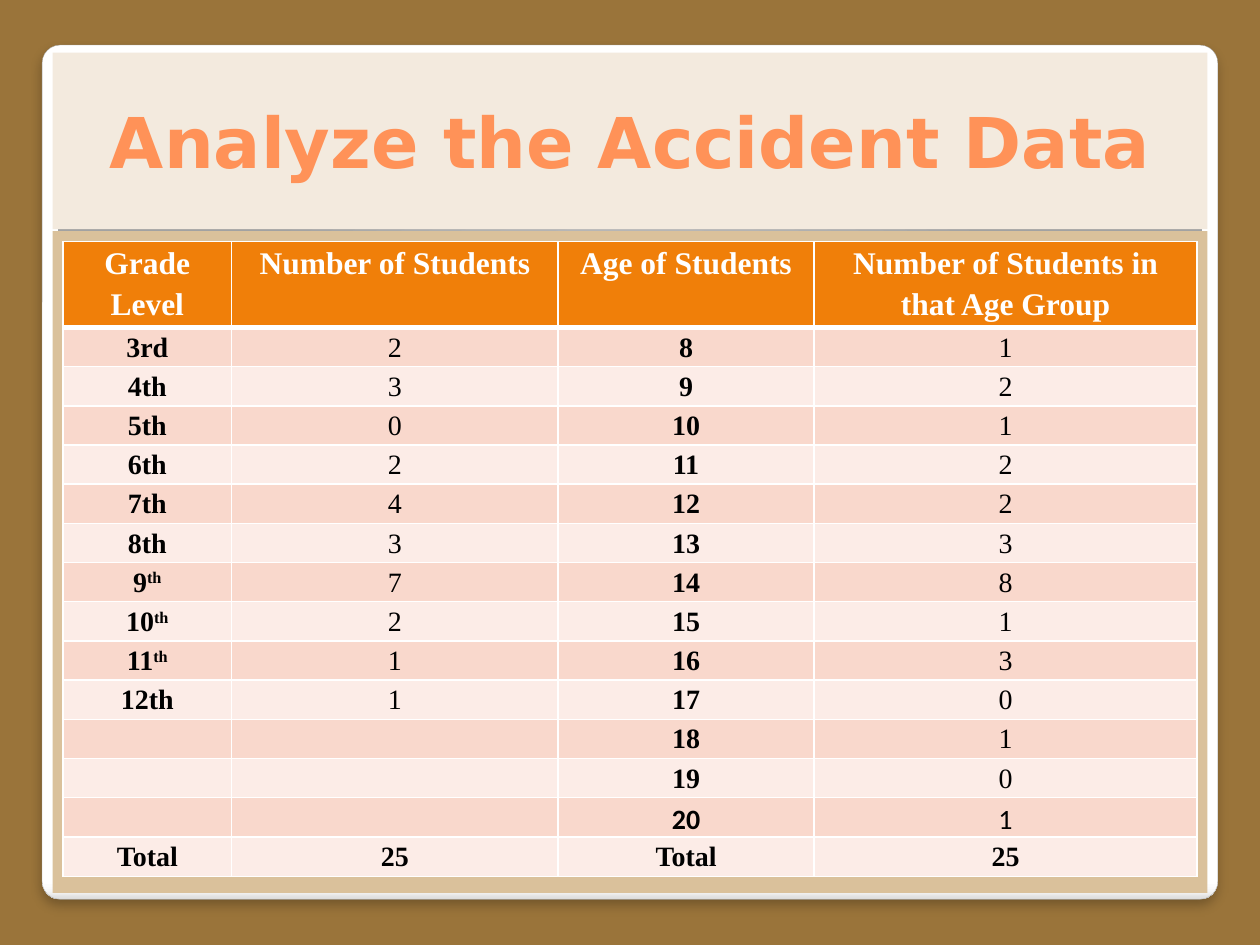
from dataclasses import dataclass
from typing import Optional

from pptx import Presentation
from pptx.dml.color import RGBColor
from pptx.enum.shapes import MSO_SHAPE as Preset
from pptx.enum.text import MSO_ANCHOR as Anchor, PP_ALIGN as Align
from pptx.oxml import parse_xml
from pptx.oxml.ns import nsdecls
from pptx.util import Cm, Pt


@dataclass(frozen=True)
class Theme:
    background: str = "9A743A"
    panel_line: str = "A4A4A4"
    body: str = "DAC19B"
    title_fill: str = "F3EADE"
    title_text: str = "FF9258"
    header: str = "F07F09"
    bands: tuple = ("F9D8CC", "FCECE7")
    white: str = "FFFFFF"
    black: str = "000000"
    title_font: str = "DejaVu Sans"
    table_font: str = "Times New Roman"
    plain_font: str = "Calibri"
    title_size: int = 40
    header_size: int = 18
    cell_size: int = 16


@dataclass(frozen=True)
class Panel:
    left: float
    top: float
    width: float
    height: float
    preset: Preset = Preset.RECTANGLE
    fill: Optional[str] = None
    stops: tuple = ()
    direction: str = ""


@dataclass(frozen=True)
class Row:
    grade: str
    grade_count: str
    age: str
    age_count: str
    font: str = "Times New Roman"
    total: bool = False


THEME = Theme()

FRAME = Panel(
    0.85, 0.91, 23.7, 17.22, Preset.ROUNDED_RECTANGLE,
    stops=((0, "FFFFFF"), (98, "FFFFFF"), (99, "F7F7F7"), (100, "DADADA")),
    direction='<a:lin ang="5400000" scaled="0"/>',
)
INNER = Panel(
    1.17, 1.19, 23.06, 15.24, Preset.ROUNDED_RECTANGLE,
    stops=((0, "FFFFFF"), (55, "E1E1E1"), (100, "A2A2A2")),
    direction='<a:path path="circle"><a:fillToRect l="50000" t="175000" r="50000" b="-75000"/></a:path>',
)
BODY = Panel(1.06, 4.66, 23.28, 13.34, fill=THEME.body)
TITLE = Panel(1.06, 1.06, 23.28, 3.56, fill=THEME.title_fill)

HEADINGS = ("Grade Level", "Number of Students", "Age of Students", "Number of Students in that Age Group")
ROWS = (
    Row("3rd", "2", "8", "1"),
    Row("4th", "3", "9", "2"),
    Row("5th", "0", "10", "1"),
    Row("6th", "2", "11", "2"),
    Row("7th", "4", "12", "2"),
    Row("8th", "3", "13", "3"),
    Row("9^th", "7", "14", "8"),
    Row("10^th", "2", "15", "1"),
    Row("11^th", "1", "16", "3"),
    Row("12th", "1", "17", "0"),
    Row("", "", "18", "1"),
    Row("", "", "19", "0"),
    Row("", "", "20", "1", font=THEME.plain_font),
    Row("Total", "25", "Total", "25", total=True),
)
COLUMN_WIDTHS = (3.4, 6.58, 5.16, 7.72)
TABLE_LEFT, TABLE_TOP = 1.27, 4.87
HEADER_HEIGHT, ROW_HEIGHT = 1.73, 0.79


def write_text(frame, text: str, *, font: str, size: int, color: str, bold: bool = False,
               line_spacing: Optional[float] = None, space_after: Optional[int] = None) -> None:
    para = frame.paragraphs[0]
    para.alignment = Align.CENTER
    if line_spacing is not None:
        para.line_spacing = line_spacing
    if space_after is not None:
        para.space_after = Pt(space_after)
    for index, part in enumerate(text.split("^")):
        span = para.add_run()
        span.text = part
        span.font.name = font
        span.font.size = Pt(size)
        span.font.bold = bold
        span.font.color.rgb = RGBColor.from_string(color)
        if index:
            span._r.get_or_add_rPr().set("baseline", "30000")


def gradient(panel: Panel):
    stops = "".join(
        f'<a:gs pos="{position * 1000}"><a:srgbClr val="{color}"/></a:gs>'
        for position, color in panel.stops
    )
    return parse_xml(
        f'<a:gradFill {nsdecls("a")} rotWithShape="1"><a:gsLst>{stops}</a:gsLst>{panel.direction}</a:gradFill>'
    )


def draw_panel(page, panel: Panel):
    box = page.shapes.add_shape(
        panel.preset, Cm(panel.left), Cm(panel.top), Cm(panel.width), Cm(panel.height)
    )
    box.shadow.inherit = False
    if panel.preset == Preset.ROUNDED_RECTANGLE:
        box.adjustments[0] = 0.021
    if panel.fill:
        box.fill.solid()
        box.fill.fore_color.rgb = RGBColor.from_string(panel.fill)
    else:
        box._element.spPr.insert(2, gradient(panel))
    box.line.fill.background()
    return box


def draw_frame(page) -> None:
    box = draw_panel(page, FRAME)
    box.line.color.rgb = RGBColor.from_string(THEME.panel_line)
    box.line.width = Pt(0.16)
    properties = box._element.spPr
    properties[-1].append(parse_xml(
        f'<a:outerShdw {nsdecls("a")} blurRad="{Pt(6)}" dist="{Pt(4)}" dir="5400000" algn="t" rotWithShape="0">'
        f'<a:srgbClr val="{THEME.black}"><a:alpha val="25000"/></a:srgbClr></a:outerShdw>'
    ))


def style_cell(cell, fill: str, top: int = 1, bottom: int = 1) -> None:
    cell.margin_left = cell.margin_right = Cm(0.18)
    cell.margin_top = cell.margin_bottom = 0
    properties = cell._tc.get_or_add_tcPr()
    for side, width in (("L", 1), ("R", 1), ("T", top), ("B", bottom)):
        properties.append(parse_xml(
            f'<a:ln{side} {nsdecls("a")} w="{Pt(width)}"><a:solidFill>'
            f'<a:srgbClr val="{THEME.white}"/></a:solidFill></a:ln{side}>'
        ))
    cell.fill.solid()
    cell.fill.fore_color.rgb = RGBColor.from_string(fill)


def draw_table(page) -> None:
    height = HEADER_HEIGHT + ROW_HEIGHT * len(ROWS)
    table = page.shapes.add_table(
        len(ROWS) + 1, len(HEADINGS), Cm(TABLE_LEFT), Cm(TABLE_TOP), Cm(sum(COLUMN_WIDTHS)), Cm(height)
    ).table
    for column, width in zip(table.columns, COLUMN_WIDTHS):
        column.width = Cm(width)
    for index, line in enumerate(table.rows):
        line.height = Cm(ROW_HEIGHT if index else HEADER_HEIGHT)

    spacing = {"line_spacing": 1.15, "space_after": 10}
    for column, heading in enumerate(HEADINGS):
        cell = table.cell(0, column)
        style_cell(cell, THEME.header, bottom=3)
        write_text(cell.text_frame, heading, font=THEME.table_font, size=THEME.header_size,
                   color=THEME.white, bold=True, **spacing)

    for index, row in enumerate(ROWS):
        values = (row.grade, row.grade_count, row.age, row.age_count)
        for column, value in enumerate(values):
            cell = table.cell(index + 1, column)
            style_cell(cell, THEME.bands[index % 2], top=1 if index else 3)
            if value:
                write_text(cell.text_frame, value, font=row.font, size=THEME.cell_size,
                           color=THEME.black, bold=row.total or column % 2 == 0, **spacing)


def main() -> None:
    deck = Presentation()
    deck.slide_width, deck.slide_height = Cm(25.4), Cm(19.05)
    page = deck.slides.add_slide(deck.slide_layouts[6])
    page.background.fill.solid()
    page.background.fill.fore_color.rgb = RGBColor.from_string(THEME.background)
    draw_frame(page)
    draw_panel(page, INNER)
    draw_panel(page, BODY)
    title = draw_panel(page, TITLE).text_frame
    title.word_wrap = True
    title.vertical_anchor = Anchor.MIDDLE
    write_text(title, "Analyze the Accident Data", font=THEME.title_font, size=THEME.title_size,
               color=THEME.title_text, bold=True)
    draw_table(page)
    deck.save("out.pptx")


if __name__ == "__main__":
    main()
